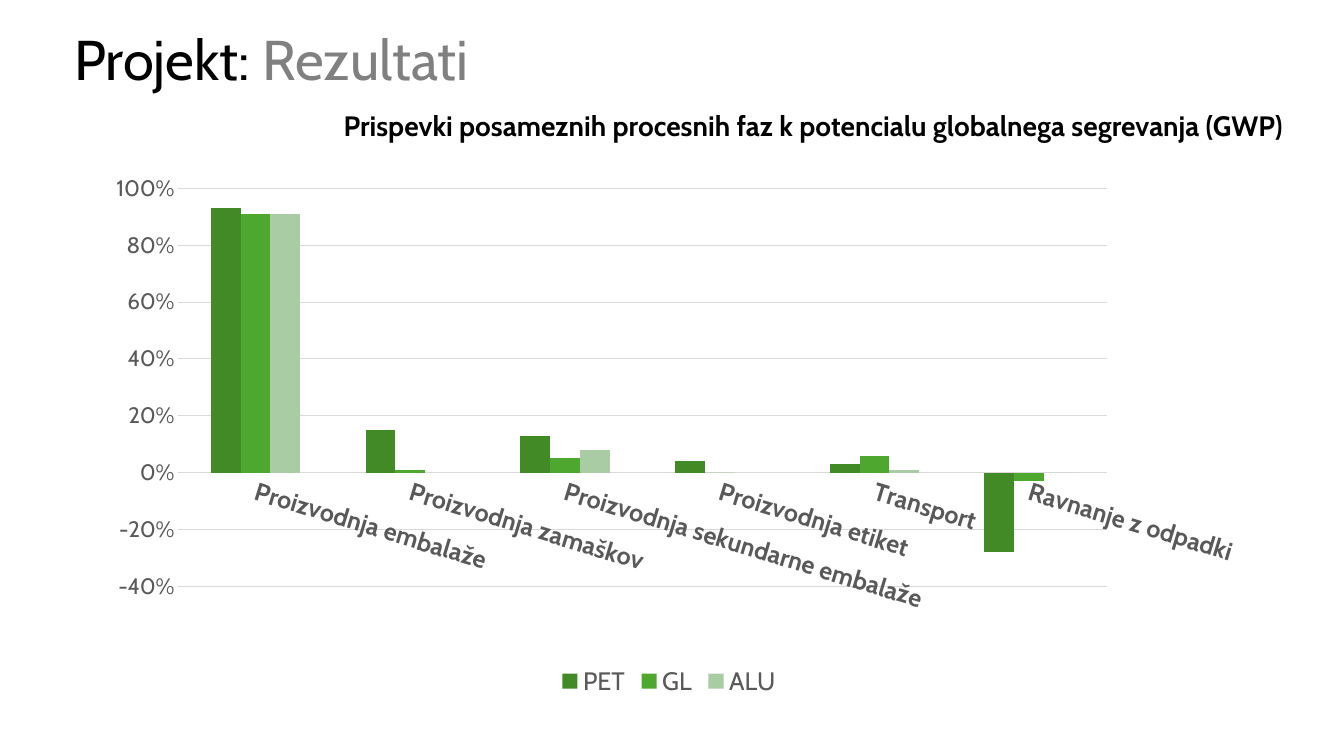
from lxml import etree
from pptx import Presentation
from pptx.chart.data import CategoryChartData
from pptx.dml.color import RGBColor
from pptx.enum.chart import XL_CHART_TYPE as CT, XL_LEGEND_POSITION as LP, XL_TICK_MARK as TM
from pptx.enum.text import MSO_ANCHOR as MA
from pptx.oxml.ns import qn
from pptx.util import Inches, Pt

COLORS = {"black": "000000", "gray": "808080", "label": "595959", "grid": "D9D9D9",
          "PET": "418A26", "GL": "4EA72E", "ALU": "AACCA4"}


def rgb(name):
    return RGBColor.from_string(COLORS[name])


def set_font(font, size, color, bold=False):
    for key, value in {"name": "Cabin", "size": Pt(size), "bold": bold}.items():
        setattr(font, key, value)
    font.color.rgb = rgb(color)


prs = Presentation()
prs.slide_width, prs.slide_height = Inches(13.33), Inches(7.5)
s = prs.slides.add_slide(prs.slide_layouts[6])

data = CategoryChartData(number_format="0%")
data.categories = ["Proizvodnja embalaže", "Proizvodnja zamaškov",
                   "Proizvodnja sekundarne embalaže", "Proizvodnja etiket",
                   "Transport", "Ravnanje z odpadki"]
data.add_series("PET", [0.93, 0.15, 0.13, 0.04, 0.03, -0.28])
data.add_series("GL", [0.91, 0.01, 0.05, 0, 0.06, -0.03])
data.add_series("ALU", [0.91, None, 0.08, None, 0.01, 0])
chart = s.shapes.add_chart(CT.COLUMN_CLUSTERED, Inches(0.64), Inches(1.55),
                           Inches(11.99), Inches(5.41), data).chart
set_font(chart.font, 10, "black")
chart.has_title = False
chart.has_legend = True
chart.legend.position = LP.BOTTOM
chart.legend.include_in_layout = False
set_font(chart.legend.font, 18, "label")

plot = chart.plots[0]
for key, value in {"gap_width": 219, "overlap": 0, "vary_by_categories": False}.items():
    setattr(plot, key, value)
for series in plot.series:
    series.invert_if_negative = False
    series.format.fill.solid()
    series.format.fill.fore_color.rgb = rgb(series.name)

cat, val = chart.category_axis, chart.value_axis
for axis, size, bold in [(cat, 18, True), (val, 16, False)]:
    axis.major_tick_mark = axis.minor_tick_mark = TM.NONE
    set_font(axis.tick_labels.font, size, "label", bold)
val.minimum_scale, val.maximum_scale, val.major_unit = -0.4, 1, 0.2
val.tick_labels.number_format = "0%"
val.tick_labels.number_format_is_linked = False
val.format.line.fill.background()
for line in [cat.format.line, val.major_gridlines.format.line]:
    line.width = Pt(0.75)
    line.color.rgb = rgb("grid")

body = cat._element.find(qn("c:txPr")).find(qn("a:bodyPr"))
body.set("rot", str(17 * 60000))
body.set("vert", "horz")

area = chart._chartSpace.chart.plotArea
for old in area.findall(qn("c:layout")):
    area.remove(old)
layout = etree.Element(qn("c:layout"))
area.insert(0, layout)
manual = etree.SubElement(layout, qn("c:manualLayout"))
for tag, value in {"layoutTarget": "inner", "xMode": "edge", "yMode": "edge",
                   "x": 0.094, "y": 0.059, "w": 0.768, "h": 0.73}.items():
    etree.SubElement(manual, qn("c:" + tag)).set("val", str(value))

texts = [
    ((3.31, 1.07, 10.03, 0.86), MA.TOP, 20, True,
     [("Prispevki posameznih procesnih faz k potencialu globalnega segrevanja (GWP)", "black")]),
    ((0.64, 0.07, 11.5, 1.09), MA.MIDDLE, 40, False,
     [("Projekt: ", "black"), ("Rezultati", "gray")]),
]
for box, anchor, size, bold, runs in texts:
    tf = s.shapes.add_textbox(*map(Inches, box)).text_frame
    tf.word_wrap = True
    tf.vertical_anchor = anchor
    p = tf.paragraphs[0]
    p.line_spacing = 0.9
    for text, color in runs:
        r = p.add_run()
        r.text = text
        set_font(r.font, size, color, bold)

prs.save("out.pptx")
